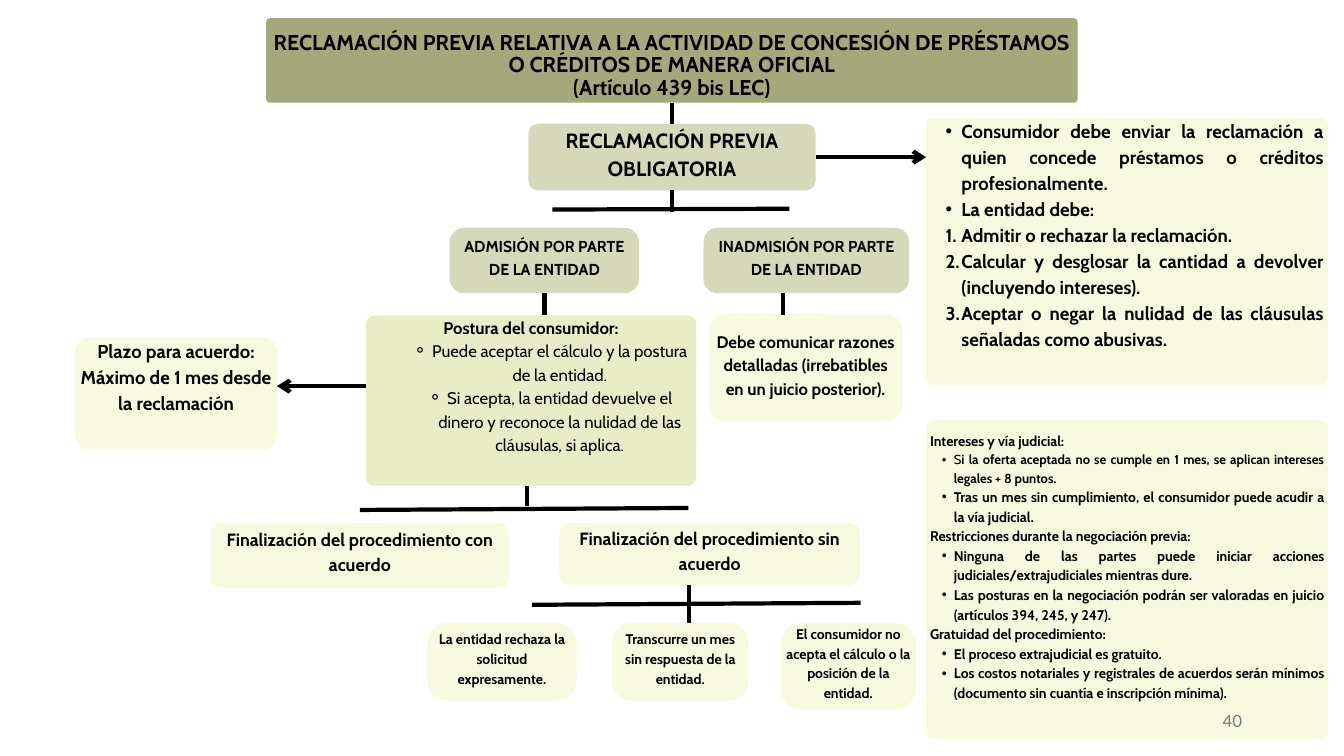
from collections import namedtuple

from lxml import etree
from pptx import Presentation
from pptx import util as u
from pptx.dml.color import RGBColor
from pptx.enum import shapes, text
from pptx.oxml import ns

COLORS = {
    "title": "A4A87B",
    "step": "D5D8B9",
    "stance": "E9EDC7",
    "note": "F8FAE0",
    "ink": "000000",
    "page": "797979",
}
ALIGN = text.PP_ALIGN
INSET = 0.1
TOP, BOTTOM, RIGHT = 0, 2, 3

Box = namedtuple("Box", "left top width height")
# runs: a string, or a list of (text, bold) pairs; marker: bullet character or "1."
Item = namedtuple("Item", "runs marker size bold", defaults=(None, None, True))


def color(name):
    return RGBColor.from_string(COLORS[name])


def inside(region, left, top, width, height):
    """Box whose position is counted from the corner of a region."""
    return Box(region.left + left, region.top + top, width, height)


def add_marker(paragraph, marker, indent, hanging):
    properties = paragraph._p.get_or_add_pPr()
    properties.set("marL", str(u.Cm(indent)))
    properties.set("indent", str(-u.Cm(hanging)))
    if marker == "1.":
        etree.SubElement(properties, ns.qn("a:buAutoNum"), type="arabicPeriod")
    else:
        etree.SubElement(properties, ns.qn("a:buFont"), typeface="Arial")
        etree.SubElement(properties, ns.qn("a:buChar"), char=marker)


def add_text(slide, box, items, size, align=ALIGN.CENTER, leading=1.4,
             indent=(0.6, 0.3), spare=0):
    """Text box centred vertically, with spare centimetres left free below."""
    frame = slide.shapes.add_textbox(*map(u.Cm, box)).text_frame
    frame.word_wrap = True
    frame.vertical_anchor = text.MSO_ANCHOR.MIDDLE
    frame.margin_left = frame.margin_right = frame.margin_top = u.Cm(INSET)
    frame.margin_bottom = u.Cm(INSET + spare)
    for index, item in enumerate(items):
        if isinstance(item, str):
            item = Item(item)
        paragraph = frame.add_paragraph() if index else frame.paragraphs[0]
        item_size = item.size or size
        paragraph.alignment = align
        paragraph.line_spacing = u.Pt(round(item_size * leading, 1))
        if item.marker:
            add_marker(paragraph, item.marker, *indent)
        runs = [(item.runs, item.bold)] if isinstance(item.runs, str) else item.runs
        for words, bold in runs:
            run = paragraph.add_run()
            run.text = words
            run.font.name = "Cabin"
            run.font.size = u.Pt(item_size)
            run.font.bold = bold
            run.font.color.rgb = color("ink")


def add_card(slide, box, fill, radius, items, size, lift=0.22, **layout):
    """Rounded card; its text area starts lift centimetres above it."""
    card = slide.shapes.add_shape(
        shapes.MSO_SHAPE.ROUNDED_RECTANGLE, *map(u.Cm, box))
    card.adjustments[0] = radius / min(box.width, box.height)
    card.shadow.inherit = False
    card.fill.solid()
    card.fill.fore_color.rgb = color(fill)
    card.line.fill.background()
    text_box = Box(box.left, box.top - lift, box.width, box.height + lift)
    add_text(slide, text_box, items, size, **layout)
    return card


def add_line(slide, region, start, end, arrow=False):
    points = [u.Cm(value) for x, y in (start, end)
              for value in (region.left + x, region.top + y)]
    line = slide.shapes.add_connector(shapes.MSO_CONNECTOR.STRAIGHT, *points)
    line.line.color.rgb = color("ink")
    line.line.width = u.Pt(3)
    if arrow:
        etree.SubElement(line.line._get_or_add_ln(), ns.qn("a:tailEnd"), type="arrow")
    etree.SubElement(line._element.spPr, ns.qn("a:effectLst"))
    return line


def draw_heading(slide, region):
    title = add_card(slide, inside(region, 0, 0, region.width, 2.13), "title", 0.1, [
        "RECLAMACIÓN PREVIA RELATIVA A LA ACTIVIDAD DE CONCESIÓN DE PRÉSTAMOS "
        "O CRÉDITOS DE MANERA OFICIAL",
        "(Artículo 439 bis LEC)",
    ], 15.3, lift=-0.28, leading=1.04)
    middle = region.width / 2
    claim = add_card(slide, inside(region, middle - 3.62, 2.66, 7.24, 1.68), "step", 0.25,
                     ["RECLAMACIÓN PREVIA OBLIGATORIA"], 14.7, lift=0.25)
    stem = add_line(slide, region, (middle, 2.13), (middle, 2.66))
    stem.begin_connect(title, BOTTOM)
    stem.end_connect(claim, TOP)
    add_line(slide, region, (middle, 4.34), (middle, 4.87)).begin_connect(claim, BOTTOM)
    add_line(slide, region, (7.21, 4.82), (13.18, 4.8))
    to_duties = add_line(slide, region, (middle + 3.62, 3.5), (16.63, 3.5), arrow=True)
    to_duties.begin_connect(claim, RIGHT)


def draw_entity_answers(slide, region):
    admission = add_card(slide, inside(region, 0, 0, 4.78, 1.65), "step", 0.38,
                         ["ADMISIÓN POR PARTE", "DE LA ENTIDAD"], 11.3)
    add_card(slide, inside(region, 6.4, 0, 5.18, 1.65), "step", 0.35,
             ["INADMISIÓN POR PARTE", "DE LA ENTIDAD"], 11.3)
    add_card(slide, inside(region, 6.55, 2.18, 4.85, 2.69), "note", 0.38,
             ["Debe comunicar razones detalladas (irrebatibles en un juicio posterior)."], 12)
    add_line(slide, region, (2.39, 1.65), (2.39, 2.21)).begin_connect(admission, BOTTOM)
    add_line(slide, region, (8.41, 1.65), (8.41, 2.2))


def draw_consumer_stance(slide, region):
    add_card(slide, inside(region, 0, 0.56, 5.08, 2.82), "note", 0.36,
             ["Plazo para acuerdo: Máximo de 1 mes desde la reclamación"],
             13.3, lift=0.27, spare=0.66)
    add_card(slide, inside(region, 7.32, 0, 8.33, 4.29), "stance", 0.22, [
        "Postura del consumidor:",
        Item("Puede aceptar el cálculo y la postura de la entidad.", "⚬", bold=False),
        Item("Si acepta, la entidad devuelve el dinero y reconoce la nulidad de las "
             "cláusulas, si aplica.", "⚬", bold=False),
    ], 12, indent=(1.45, 0.48), spare=0.59)
    add_line(slide, region, (7.32, 1.78), (5.08, 1.78), arrow=True)
    add_line(slide, region, (11.38, 4.29), (11.38, 4.8))
    add_line(slide, region, (7.17, 4.9), (15.45, 4.85))


def draw_outcomes(slide, region):
    add_card(slide, inside(region, 0, 0, 7.52, 1.63), "note", 0.25,
             ["Finalización del procedimiento con acuerdo"], 12.7, lift=0.26)
    add_card(slide, inside(region, 8.79, 0, 7.57, 1.57), "note", 0.25,
             ["Finalización del procedimiento sin acuerdo"], 12.7, lift=0.26)
    add_line(slide, region, (8.1, 2.06), (16.38, 2.01))
    add_line(slide, region, (12.06, 1.57), (12.06, 2.52))
    reasons = [
        (5.46, 3.76, 1.96, "La entidad rechaza la solicitud expresamente."),
        (10.11, 3.45, 1.96, "Transcurre un mes sin respuesta de la entidad."),
        (14.37, 3.4, 2.18,
         "El consumidor no acepta el cálculo o la posición de la entidad."),
    ]
    for left, width, height, reason in reasons:
        add_card(slide, inside(region, left, 2.52, width, height), "note", 0.5,
                 [reason], 10)


def draw_duties(slide, region):
    add_card(slide, region, "note", 0.18, [
        Item("Consumidor debe enviar la reclamación a quien concede préstamos o "
             "créditos profesionalmente.", "•"),
        Item("La entidad debe:", "•"),
        Item("Admitir o rechazar la reclamación.", "1."),
        Item("Calcular y desglosar la cantidad a devolver (incluyendo intereses).", "1."),
        Item("Aceptar o negar la nulidad de las cláusulas señaladas como abusivas.", "1."),
    ], 13.3, lift=0.26, align=ALIGN.JUSTIFY, indent=(0.79, 0.4), spare=0.66)


def draw_rules(slide, region):
    add_card(slide, region, "note", 0.18, [
        "Intereses y vía judicial:",
        Item([("S", False), ("i la oferta aceptada no se cumple en 1 mes, se aplican "
                             "intereses legales + 8 puntos.", True)], "•", 9.3),
        Item("Tras un mes sin cumplimiento, el consumidor puede acudir a la vía "
             "judicial.", "•"),
        "Restricciones durante la negociación previa:",
        Item("Ninguna de las partes puede iniciar acciones judiciales/extrajudiciales "
             "mientras dure.", "•"),
        Item("Las posturas en la negociación podrán ser valoradas en juicio "
             "(artículos 394, 245, y 247).", "•"),
        "Gratuidad del procedimiento:",
        Item("El proceso extrajudicial es gratuito.", "•"),
        Item("Los costos notariales y registrales de acuerdos serán mínimos "
             "(documento sin cuantía e inscripción mínima).", "•"),
    ], 10, align=ALIGN.JUSTIFY, spare=0.49)


def draw_page_number(slide, region):
    frame = slide.shapes.add_textbox(*map(u.Cm, region)).text_frame
    frame.word_wrap = True
    frame.vertical_anchor = text.MSO_ANCHOR.MIDDLE
    frame.text = "40"
    paragraph = frame.paragraphs[0]
    paragraph.alignment = ALIGN.RIGHT
    font = paragraph.runs[0].font
    font.name, font.size = "Lato", u.Pt(12)
    font.color.rgb = color("page")


def main():
    presentation = Presentation()
    presentation.slide_width, presentation.slide_height = u.Cm(33.87), u.Cm(19.05)
    slide = presentation.slides.add_slide(presentation.slide_layouts[6])
    draw_heading(slide, Box(6.71, 0.46, 20.45, 4.87))
    draw_entity_answers(slide, Box(11.33, 5.74, 11.58, 4.87))
    draw_consumer_stance(slide, Box(1.9, 7.95, 15.65, 4.9))
    draw_outcomes(slide, Box(5.31, 13.18, 17.77, 4.7))
    draw_duties(slide, Box(23.34, 2.97, 10.13, 6.73))
    draw_rules(slide, Box(23.34, 10.59, 10.13, 8.03))
    draw_page_number(slide, Box(23.93, 17.65, 7.62, 1.02))
    presentation.save("out.pptx")


if __name__ == "__main__":
    main()
